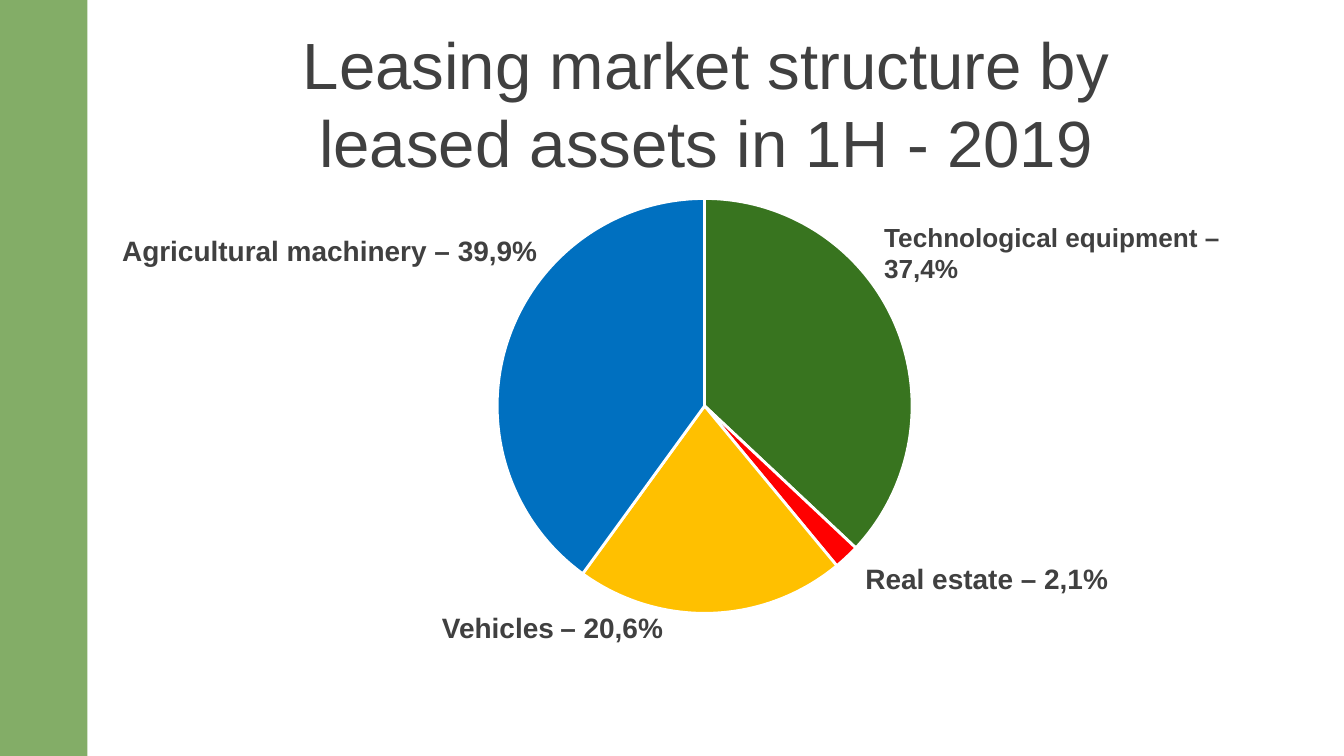
from pptx import Presentation
from pptx.chart.data import CategoryChartData
from pptx.dml.color import RGBColor
from pptx.enum.chart import XL_CHART_TYPE as ChartType
from pptx.enum.shapes import MSO_SHAPE as Shape
from pptx.enum.text import MSO_ANCHOR as Anchor, PP_ALIGN as Align
from pptx.oxml import parse_xml
from pptx.oxml.ns import nsdecls
from pptx.util import Inches, Pt

FONT = "Arial"
TEXT_COLOR = "404040"
SLIDE_WIDTH = 10
SLIDE_HEIGHT = SLIDE_WIDTH * 9 / 16
ASSETS = [
    ("1", 37, "38741F"),
    ("2", 2, "FF0000"),
    ("3", 21, "FFC000"),
    ("4", 40, "0070C0"),
]
LABELS = [
    (["Agricultural machinery – 39,9%"], 0.81, 1.69, 3.95, 0.35, 15),
    (["Real estate – 2,1%"], 6.34, 4.13, 2.65, 0.35, 15),
    (["Vehicles", " ", "– 20,6%"], 3.19, 4.49, 2.51, 0.35, 15),
    (["Technological equipment – 37,4%"], 6.48, 1.71, 3.29, 0.34, 14),
]


def color(hex_string):
    """Return the colour for a hex string."""
    return RGBColor.from_string(hex_string)


def add_side_band(slide, left, top, width, height, fill):
    """Add a plain coloured rectangle."""
    band = slide.shapes.add_shape(
        Shape.RECTANGLE, Inches(left), Inches(top), Inches(width), Inches(height)
    )
    band.shadow.inherit = False
    band.fill.solid()
    band.fill.fore_color.rgb = color(fill)
    band.line.fill.background()


def add_text(slide, lines, left, top, width, height, size,
             bold=False, align=Align.LEFT, anchor=Anchor.TOP):
    """Add a wrapped text box; each line is a list of runs, lone spaces are narrower."""
    box = slide.shapes.add_textbox(
        Inches(left), Inches(top), Inches(width), Inches(height)
    )
    frame = box.text_frame
    frame.word_wrap = True
    frame.vertical_anchor = anchor
    for index, words in enumerate(lines):
        paragraph = frame.add_paragraph() if index else frame.paragraphs[0]
        paragraph.alignment = align
        paragraph.font.name = FONT
        paragraph.font.size = Pt(size)
        paragraph.font.bold = bold
        paragraph.font.color.rgb = color(TEXT_COLOR)
        for word in words:
            run = paragraph.add_run()
            run.text = word
            if word == " ":
                run.font.size = Pt(12)


def set_plot_layout(chart, left, top, width, height):
    """Place the inner plot area by fractions of the chart size."""
    plot_area = chart.plots[0]._element.getparent()
    for layout in plot_area.findall("{*}layout"):
        plot_area.remove(layout)
    plot_area.insert(0, parse_xml(
        f'<c:layout {nsdecls("c")}><c:manualLayout>'
        '<c:layoutTarget val="inner"/><c:xMode val="edge"/><c:yMode val="edge"/>'
        f'<c:x val="{left}"/><c:y val="{top}"/><c:w val="{width}"/><c:h val="{height}"/>'
        '</c:manualLayout></c:layout>'
    ))


def add_pie(slide, left, top, width, height):
    """Add the pie chart of leased assets."""
    data = CategoryChartData()
    data.categories = [name for name, _, _ in ASSETS]
    data.add_series("Series 1", [value for _, value, _ in ASSETS])
    chart = slide.shapes.add_chart(
        ChartType.PIE, Inches(left), Inches(top), Inches(width), Inches(height), data
    ).chart
    chart.has_title = False
    chart.has_legend = False
    chart.font.name = FONT
    chart.font.size = Pt(10)
    chart.font.color.rgb = color("000000")
    plot = chart.plots[0]
    plot.vary_by_categories = True
    for index, (_, _, fill) in enumerate(ASSETS):
        slice_format = plot.series[0].points[index].format
        slice_format.fill.solid()
        slice_format.fill.fore_color.rgb = color(fill)
        slice_format.line.color.rgb = color("FFFFFF")
        slice_format.line.width = Pt(1.5)
    set_plot_layout(chart, 0.19, 0.02, 0.63, 0.8)


def main():
    """Build and save the leasing market slide."""
    presentation = Presentation()
    presentation.slide_width = Inches(SLIDE_WIDTH)
    presentation.slide_height = Inches(SLIDE_HEIGHT)
    slide = presentation.slides.add_slide(presentation.slide_layouts[6])
    add_side_band(slide, 0, 0, 0.65, SLIDE_HEIGHT, "83AD67")
    title = [["Leasing market structure by"], ["leased assets in 1H - 2019"]]
    add_text(slide, title, 0.51, 0.13, 9.49, 0.59, 35, align=Align.CENTER)
    for words, *place in LABELS:
        add_text(slide, [words], *place, bold=True, anchor=Anchor.MIDDLE)
    add_pie(slide, 2.42, 1.4, 5.59, 3.86)
    presentation.save("out.pptx")


if __name__ == "__main__":
    main()
